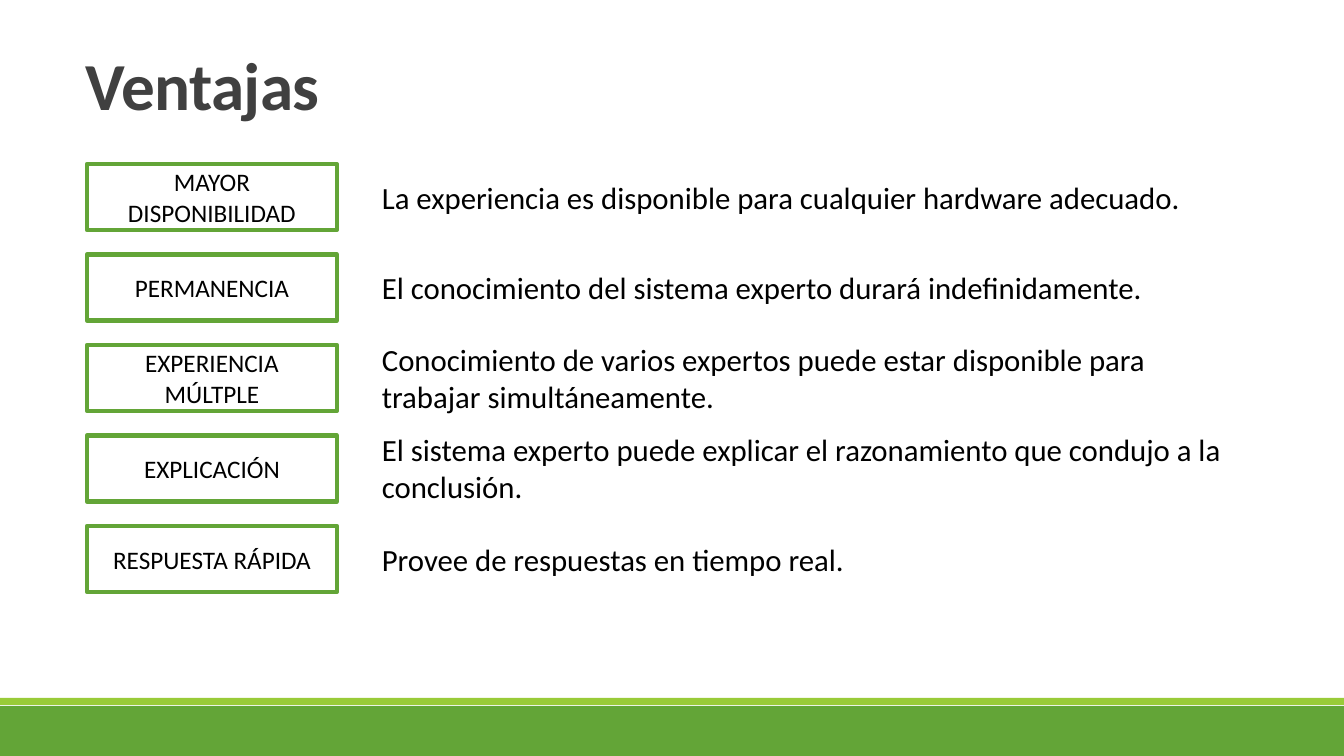
from dataclasses import dataclass

from pptx import Presentation
from pptx.dml.color import RGBColor
from pptx.enum.shapes import MSO_SHAPE
from pptx.enum.text import MSO_ANCHOR, MSO_AUTO_SIZE, PP_ALIGN
from pptx.util import Pt

RECT = MSO_SHAPE.RECTANGLE
MIDDLE = MSO_ANCHOR.MIDDLE
GROW = MSO_AUTO_SIZE.SHAPE_TO_FIT_TEXT
LEFT, CENTER, JUSTIFY = PP_ALIGN.LEFT, PP_ALIGN.CENTER, PP_ALIGN.JUSTIFY

TITLE = "Ventajas"
# label, description, lines the description takes
ROWS = [
    ("MAYOR DISPONIBILIDAD",
     "La experiencia es disponible para cualquier hardware adecuado.", 1),
    ("PERMANENCIA",
     "El conocimiento del sistema experto durará indefinidamente.", 1),
    ("EXPERIENCIA MÚLTPLE",
     "Conocimiento de varios expertos puede estar disponible para "
     "trabajar simultáneamente.", 2),
    ("EXPLICACIÓN",
     "El sistema experto puede explicar el razonamiento que condujo a la "
     "conclusión.", 2),
    ("RESPUESTA RÁPIDA", "Provee de respuestas en tiempo real.", 1),
]


@dataclass(frozen=True)
class Theme:
    font: str = "Calibri"
    green: str = "63A537"
    lime: str = "99CB38"
    white: str = "FFFFFF"
    black: str = "000000"
    gray: str = "404040"
    title: int = 48
    label: int = 18
    body: int = 22
    border: int = 3


THEME = Theme()

# Lengths in px
WIDTH, HEIGHT = 1344, 756
SCALE = 12192000 / WIDTH
TITLE_BOX = (76, 51, 1207, 156)
BARS = [((0, 706, WIDTH, 50), THEME.green), ((0, 698, WIDTH, 7), THEME.lime)]
LABEL_X, LABEL_W, LABEL_H = 87, 250, 66
BODY_X, BODY_W = 372, 886
BODY_H = {1: 47, 2: 85}
FIRST, LAST = 164, 526
STEP = (LAST - FIRST) / (len(ROWS) - 1)


def emu(box):
    return [round(px * SCALE) for px in box]


def add_rect(slide, box, fill, line=None):
    rect = slide.shapes.add_shape(RECT, *emu(box))
    rect.shadow.inherit = False
    rect.fill.solid()
    rect.fill.fore_color.rgb = RGBColor.from_string(fill)
    if line:
        rect.line.color.rgb = RGBColor.from_string(line)
        rect.line.width = Pt(THEME.border)
    else:
        rect.line.fill.background()
    return rect


def write(shape, text, size, color, align):
    """Put one styled paragraph in the shape and return it."""
    shape.text_frame.word_wrap = True
    para = shape.text_frame.paragraphs[0]
    para.text = text
    para.alignment = align
    para.font.name = THEME.font
    para.font.size = Pt(size)
    para.font.color.rgb = RGBColor.from_string(color)
    return para


def add_title(slide):
    box = slide.shapes.add_textbox(*emu(TITLE_BOX))
    para = write(box, TITLE, THEME.title, THEME.gray, JUSTIFY)
    para.font.bold = True
    para.line_spacing = 0.85
    para.runs[0].font._element.set("spc", "-50")


def add_row(slide, top, label, body, lines):
    rect = add_rect(slide, (LABEL_X, top, LABEL_W, LABEL_H),
                    THEME.white, THEME.green)
    rect.text_frame.vertical_anchor = MIDDLE
    write(rect, label, THEME.label, THEME.black, CENTER)

    high = BODY_H[lines]
    y = top + (LABEL_H - high) / 2
    note = slide.shapes.add_textbox(*emu((BODY_X, y, BODY_W, high)))
    write(note, body, THEME.body, THEME.black, LEFT)
    note.text_frame.auto_size = GROW


def main():
    deck = Presentation()
    deck.slide_width, deck.slide_height = emu((WIDTH, HEIGHT))
    slide = deck.slides.add_slide(deck.slide_layouts[6])
    for box, color in BARS:
        add_rect(slide, box, color)
    add_title(slide)
    for i, row in enumerate(ROWS):
        add_row(slide, FIRST + i * STEP, *row)
    deck.save("out.pptx")


if __name__ == "__main__":
    main()
